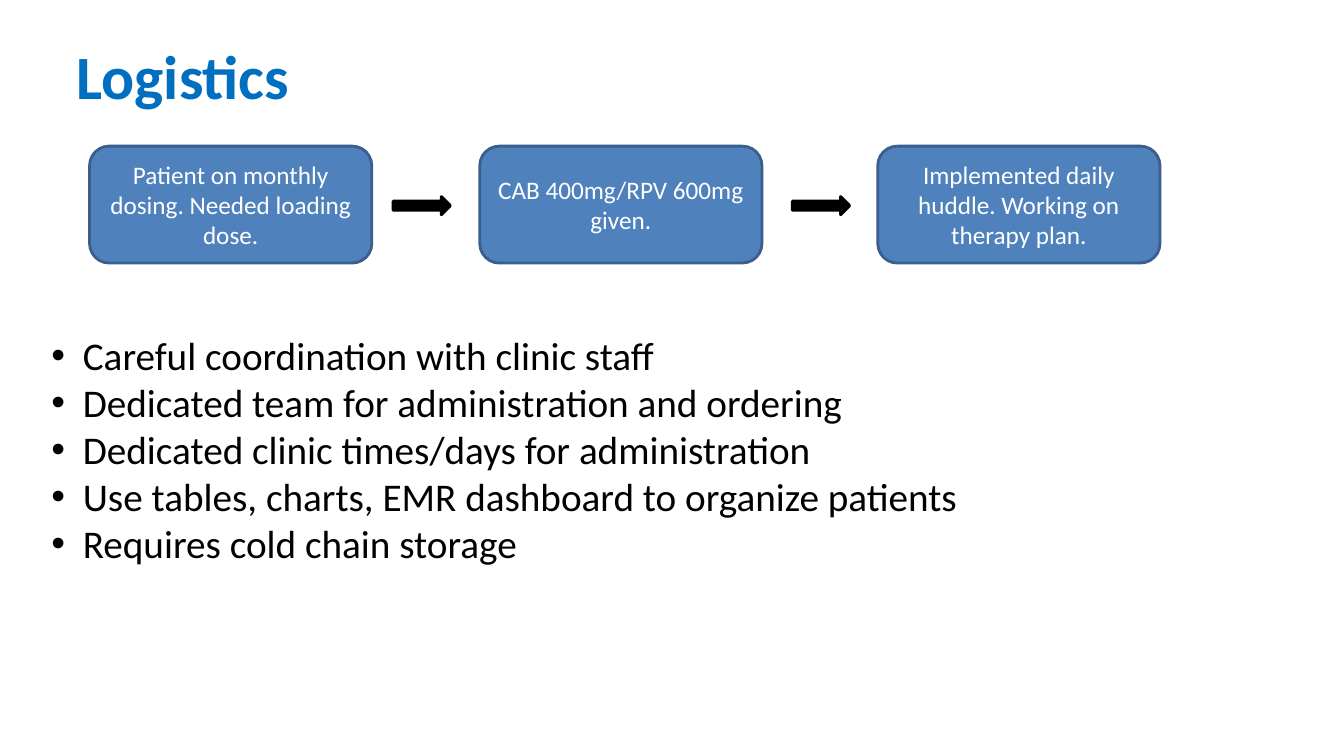
from lxml.etree import SubElement
from pptx import Presentation
from pptx.dml.color import RGBColor
from pptx.enum.shapes import MSO_SHAPE
from pptx.enum.text import MSO_ANCHOR, MSO_AUTO_SIZE, PP_ALIGN
from pptx.oxml.ns import qn
from pptx.util import Pt

COLORS = {"title": "006FC0", "box": "4F81BD", "edge": "3A5F8C",
          "white": "FFFFFF", "black": "000000"}


def style(font, size, color, bold=False):
    font.name, font.size, font.bold = "Calibri", Pt(size), bold
    font.color.rgb = RGBColor.from_string(COLORS[color])


def add_shape(kind, left, top, width, height, fill, edge):
    shape = slide.shapes.add_shape(kind, Pt(left), Pt(top), Pt(width), Pt(height))
    shape.shadow.inherit = False
    shape.fill.solid()
    shape.fill.fore_color.rgb = RGBColor.from_string(COLORS[fill])
    shape.line.color.rgb = RGBColor.from_string(COLORS[edge])
    shape.line.width = Pt(2)
    return shape


deck = Presentation()
deck.slide_width, deck.slide_height = Pt(960), Pt(540)
slide = deck.slides.add_slide(deck.slide_layouts[5])

# Title
title = slide.shapes.title
title.left, title.top, title.width, title.height = Pt(54.7), Pt(27.4), Pt(442), Pt(54.7)
frame = title.text_frame
frame.text = "Logistics"
frame.auto_size = MSO_AUTO_SIZE.NONE
frame.vertical_anchor = MSO_ANCHOR.TOP
frame.margin_left = frame.margin_top = frame.margin_right = frame.margin_bottom = 0
frame.paragraphs[0].alignment = PP_ALIGN.LEFT
style(frame.paragraphs[0].font, 44, "title", True)

# Process steps
steps = [(64, "Patient on monthly dosing. Needed loading dose."),
         (342.7, "CAB 400mg/RPV 600mg given."),
         (627, "Implemented daily huddle. Working on therapy plan.")]
for left, text in steps:
    box = add_shape(MSO_SHAPE.ROUNDED_RECTANGLE, left, 104.4, 201.6, 83.5, "box", "edge")
    frame = box.text_frame
    frame.text = text
    frame.word_wrap = True
    frame.vertical_anchor = MSO_ANCHOR.MIDDLE
    frame.paragraphs[0].alignment = PP_ALIGN.CENTER
    style(frame.paragraphs[0].font, 18, "white")

# Arrows between steps
for left in (280.8, 566):
    add_shape(MSO_SHAPE.RIGHT_ARROW, left, 140.4, 41, 13, "black", "black")

# Bullet list
points = ["Careful coordination with clinic staff",
          "Dedicated team for administration and ordering",
          "Dedicated clinic times/days for administration",
          "Use tables, charts, EMR dashboard to organize patients",
          "Requires cold chain storage"]
body = slide.shapes.add_textbox(Pt(36.7), Pt(236.5), Pt(851), Pt(171))
frame = body.text_frame
frame.word_wrap = True
frame.margin_left = frame.margin_top = frame.margin_right = frame.margin_bottom = 0
for i, text in enumerate(points):
    para = frame.add_paragraph() if i else frame.paragraphs[0]
    para.text = text
    props = para._p.get_or_add_pPr()
    props.set("marL", str(Pt(22.5)))
    props.set("indent", str(Pt(-22.5)))
    SubElement(props, qn("a:buFont"), typeface="Arial")
    SubElement(props, qn("a:buChar"), char="•")
    style(para.font, 28, "black")

deck.save("out.pptx")
